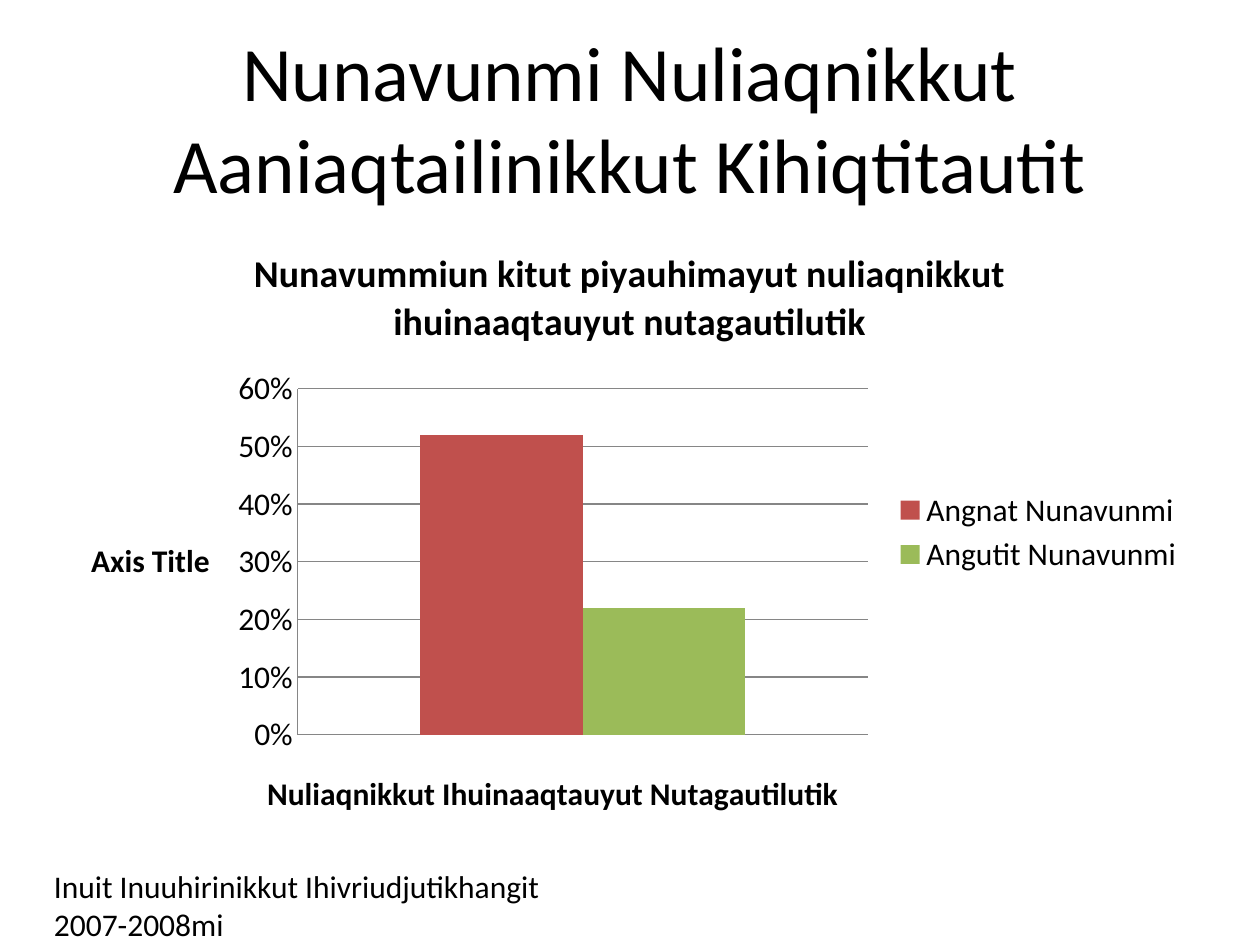
from pptx import Presentation
from pptx import util as u
from pptx.chart.data import CategoryChartData
from pptx.dml.color import RGBColor
from pptx.enum import chart as ch, text

BLACK = RGBColor(0, 0, 0)
RED = RGBColor(0xC0, 0x50, 0x4D)
GREEN = RGBColor(0x9B, 0xBB, 0x59)
GREY = RGBColor(0x86, 0x86, 0x86)
FACE = "Calibri"


def style(font, size, bold=False):
    look = {"name": FACE, "size": u.Pt(size), "bold": bold}
    for key, val in look.items():
        setattr(font, key, val)
    font.color.rgb = BLACK


def add_text(slide, box, words, size, **frame):
    body = slide.shapes.add_textbox(*map(u.Inches, box)).text_frame
    for key, val in {"word_wrap": True, **frame}.items():
        setattr(body, key, val)
    para = body.paragraphs[0]
    run = para.add_run()
    run.text = words
    style(run.font, size)
    return para


def set_title(title, words, size):
    """Fill a chart or axis title with bold, unrotated text."""
    frame = title.text_frame
    frame.text = words
    style(frame.paragraphs[0].runs[0].font, size, True)
    frame._txBody.bodyPr.set("rot", "0")
    frame._txBody.bodyPr.set("vert", "horz")


def add_bars(slide, box):
    data = CategoryChartData(number_format="0%")
    data.categories = ["1"]
    data.add_series("Angnat Nunavunmi", [0.52])
    data.add_series("Angutit Nunavunmi", [0.22])
    chart = slide.shapes.add_chart(
        ch.XL_CHART_TYPE.COLUMN_CLUSTERED, *map(u.Inches, box), data).chart
    style(chart.font, 18)
    set_title(chart.chart_title,
              "Nunavummiun kitut piyauhimayut nuliaqnikkut "
              "ihuinaaqtauyut nutagautilutik", 21.6)
    chart.chart_title.include_in_layout = False

    plot = chart.plots[0]
    plot.gap_width, plot.overlap, plot.vary_by_categories = 150, 0, False
    for bar, hue in zip(plot.series, (RED, GREEN)):
        bar.format.fill.solid()
        bar.format.fill.fore_color.rgb = hue

    cats, vals = chart.category_axis, chart.value_axis
    set_title(cats.axis_title, "Nuliaqnikkut Ihuinaaqtauyut Nutagautilutik", 18)
    set_title(vals.axis_title, "Axis Title", 18)
    cats.visible = False
    scale = {"minimum_scale": 0, "maximum_scale": 0.6, "major_unit": 0.1,
             "major_tick_mark": ch.XL_TICK_MARK.NONE,
             "has_major_gridlines": True}
    for key, val in scale.items():
        setattr(vals, key, val)
    vals.tick_labels.number_format = "0%"
    vals.tick_labels.number_format_is_linked = False
    for line in (vals.format.line, vals.major_gridlines.format.line):
        line.color.rgb = GREY
        line.width = u.Pt(0.75)

    chart.has_legend = True
    chart.legend.position = ch.XL_LEGEND_POSITION.RIGHT
    chart.legend.include_in_layout = False


def main():
    deck = Presentation()
    deck.slide_width, deck.slide_height = u.Inches(10), u.Inches(7.5)
    slide = deck.slides.add_slide(deck.slide_layouts[6])
    head = add_text(slide, (0.5, 0.3, 9, 1.25),
                    "Nunavunmi Nuliaqnikkut Aaniaqtailinikkut Kihiqtitautit",
                    44, vertical_anchor=text.MSO_ANCHOR.MIDDLE)
    head.alignment = text.PP_ALIGN.CENTER
    add_bars(slide, (0.5, 1.75, 9, 4.95))
    add_text(slide, (0.33, 6.83, 4.08, 0.4),
             "Inuit Inuuhirinikkut Ihivriudjutikhangit 2007-2008mi", 18,
             auto_size=text.MSO_AUTO_SIZE.SHAPE_TO_FIT_TEXT)
    deck.save("out.pptx")


if __name__ == "__main__":
    main()
